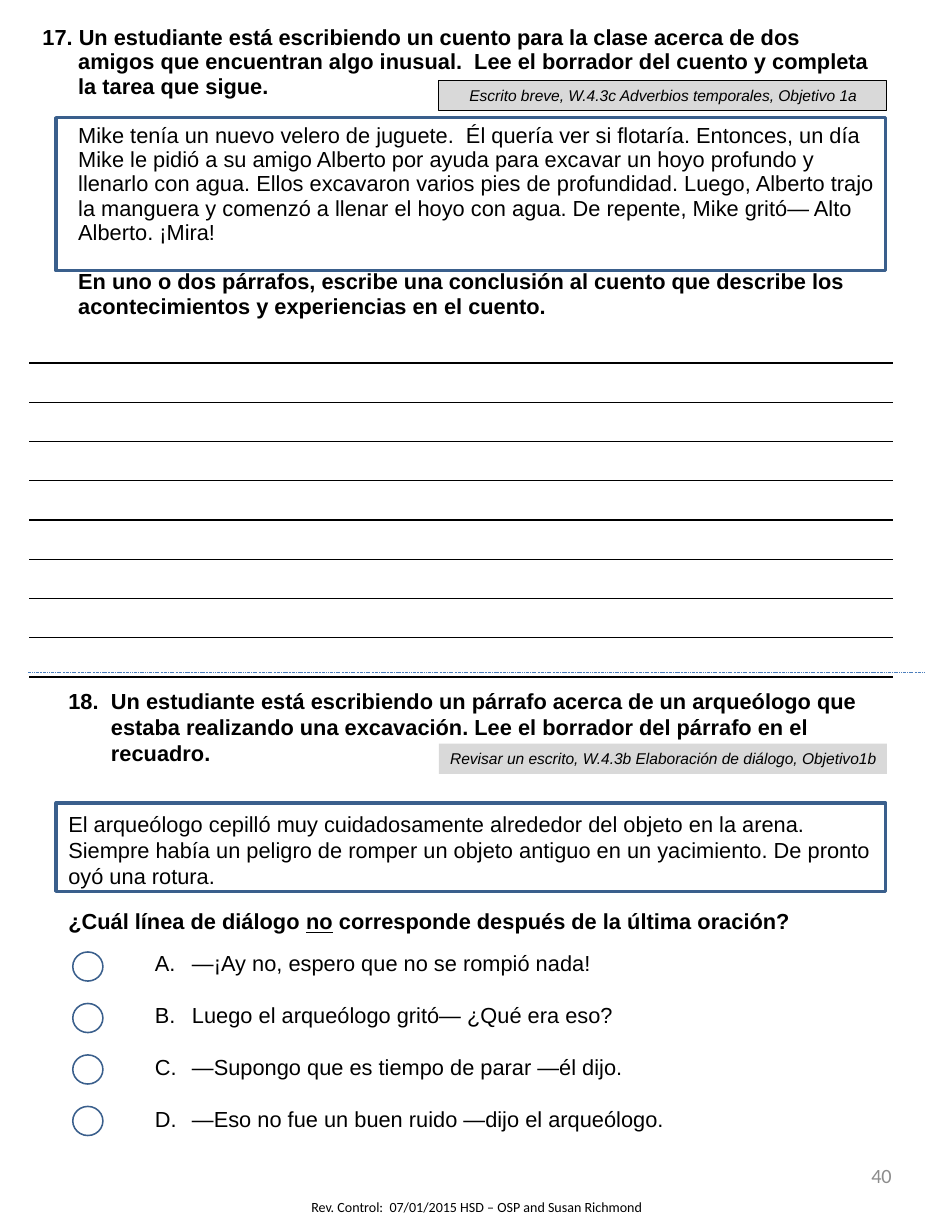
import pptx
import pptx.util
import pptx.dml.color
import pptx.enum.dml
import pptx.enum.shapes
import pptx.enum.text
import pptx.oxml
import pptx.oxml.ns

Pt = pptx.util.Pt
ALIGN = pptx.enum.text.PP_ALIGN
ANCHOR = pptx.enum.text.MSO_ANCHOR
SHAPE = pptx.enum.shapes.MSO_SHAPE

COLORS = {
    "ink": "000000",
    "frame": "3A5F8C",
    "divider": "4B7EBC",
    "tag": "D9D9D9",
    "number": "8C8C8C",
    "white": "FFFFFF",
}


def rgb(name):
    return pptx.dml.color.RGBColor.from_string(COLORS[name])


def style(p, size=14, color="ink", font="Arial", bold=False, italic=False):
    for r in p.runs:
        r.font.size = Pt(size)
        r.font.name = font
        r.font.bold = bold
        r.font.italic = italic
        r.font.color.rgb = rgb(color)


def write(p, text, pitch, after=0, left=0, hang=0, bold=False):
    p.text = text
    p.line_spacing = Pt(pitch)
    p.space_after = Pt(after)
    pPr = p._p.get_or_add_pPr()
    pPr.set("marL", str(Pt(left)))
    pPr.set("indent", str(Pt(-hang)))
    style(p, bold=bold)
    return p


def add_text(s, box, text, size, color, align=ALIGN.LEFT, anchor=ANCHOR.TOP):
    tf = s.shapes.add_textbox(*map(Pt, box)).text_frame
    tf.word_wrap = True
    tf.vertical_anchor = anchor
    tf.margin_left = tf.margin_right = Pt(7.9)
    tf.text = text
    tf.paragraphs[0].alignment = align
    style(tf.paragraphs[0], size, color, "Calibri")


def add_shape(s, kind, box, fill=None, line=None, width=1):
    sp = s.shapes.add_shape(kind, *map(Pt, box))
    sp.shadow.inherit = False
    if fill:
        sp.fill.solid()
        sp.fill.fore_color.rgb = rgb(fill)
    else:
        sp.fill.background()
    if line:
        sp.line.color.rgb = rgb(line)
        sp.line.width = Pt(width)
    else:
        sp.line.fill.background()
    return sp


def add_tag(s, box, text, align, line=None):
    sp = add_shape(s, SHAPE.RECTANGLE, box, "tag", line, 0.75)
    tf = sp.text_frame
    tf.word_wrap = True
    tf.text = text
    tf.paragraphs[0].alignment = align
    style(tf.paragraphs[0], 10, italic=True)


def add_rule(cell, side):
    ln = pptx.oxml.parse_xml(
        f'<a:{side} {pptx.oxml.ns.nsdecls("a")} w="{Pt(1)}"><a:solidFill>'
        f'<a:srgbClr val="{COLORS["ink"]}"/></a:solidFill></a:{side}>')
    cell._tc.get_or_add_tcPr().append(ln)


def add_writing_table(s, box, first_height, lines):
    x, y, w, h = box
    table = s.shapes.add_table(lines + 1, 1, *map(Pt, box)).table
    table.first_row = table.horz_banding = False
    for i, row in enumerate(table.rows):
        row.height = Pt((h - first_height) / lines if i else first_height)
        cell = row.cells[0]
        cell.margin_top = cell.margin_bottom = Pt(0 if i else 4.3)
        cell.margin_left = cell.margin_right = Pt(7.9)
        if i:
            add_rule(cell, "lnT")
        add_rule(cell, "lnB")
        cell.fill.background()

    tf = table.cell(0, 0).text_frame
    pitch = 15.7
    write(tf.paragraphs[0],
          "17. Un estudiante está escribiendo un cuento para la clase acerca de dos "
          "amigos que encuentran algo inusual.  Lee el borrador del cuento y completa "
          "la tarea que sigue.", pitch, pitch, 23, 23, True)
    write(tf.add_paragraph(),
          "Mike tenía un nuevo velero de juguete.  Él quería ver si flotaría. Entonces, "
          "un día Mike le pidió a su amigo Alberto por ayuda para excavar un hoyo "
          "profundo y llenarlo con agua. Ellos excavaron varios pies de profundidad. "
          "Luego, Alberto trajo la manguera y comenzó a llenar el hoyo con agua. De "
          "repente, Mike gritó— Alto Alberto. ¡Mira!", pitch, pitch, 23)
    write(tf.add_paragraph(),
          "En uno o dos párrafos, escribe una conclusión al cuento que describe los "
          "acontecimientos y experiencias en el cuento.", pitch, 0, 23, 0, True)


def add_choice_question(s, box):
    tf = s.shapes.add_textbox(*map(Pt, box)).text_frame
    tf.word_wrap = True
    tf.margin_left = tf.margin_right = Pt(7.9)
    tf.margin_top = tf.margin_bottom = Pt(4.3)
    pitch = 16.7
    write(tf.paragraphs[0],
          "18.\tUn estudiante está escribiendo un párrafo acerca de un arqueólogo que "
          "estaba realizando una excavación. Lee el borrador del párrafo en el recuadro.",
          pitch, 29, 27.4, 27.4, True)
    write(tf.add_paragraph(),
          "El arqueólogo cepilló muy cuidadosamente alrededor del objeto en la arena. "
          "Siempre había un peligro de romper un objeto antiguo en un yacimiento. De "
          "pronto oyó una rotura.", pitch, 12.5)
    p = write(tf.add_paragraph(), "¿Cuál línea de diálogo ", pitch, 10)
    for text in ("no", " corresponde después de la última oración?"):
        p.add_run().text = text
    style(p, bold=True)
    p.runs[1].font.underline = True

    for answer in ("—¡Ay no, espero que no se rompió nada!",
                   "Luego el arqueólogo gritó— ¿Qué era eso?",
                   "—Supongo que es tiempo de parar —él dijo.",
                   "—Eso no fue un buen ruido —dijo el arqueólogo."):
        p = write(tf.add_paragraph(), answer, pitch, pitch, 79.5, 23.8)
        p._p.get_or_add_pPr().append(pptx.oxml.parse_xml(
            f'<a:buAutoNum {pptx.oxml.ns.nsdecls("a")} type="alphaUcPeriod"/>'))


def add_answer_circles(s, box, count, step):
    x, y, w, h = box
    for i in range(count):
        add_shape(s, SHAPE.OVAL, (x, y + i * step, w, h), "white", "frame")


def add_divider(s, x, y, w):
    line = s.shapes.add_connector(
        pptx.enum.shapes.MSO_CONNECTOR.STRAIGHT, Pt(x), Pt(y), Pt(x + w), Pt(y))
    line.line.color.rgb = rgb("divider")
    line.line.width = Pt(0.25)
    line.line.dash_style = pptx.enum.dml.MSO_LINE.DASH_DOT_DOT
    line._element.spPr.append(pptx.oxml.parse_xml(
        f'<a:effectLst {pptx.oxml.ns.nsdecls("a")}/>'))


def main():
    prs = pptx.Presentation()
    prs.slide_width, prs.slide_height = Pt(612), Pt(792)
    s = prs.slides.add_slide(prs.slide_layouts[6])
    add_text(s, (192.2, 766.8, 306, 18.7),
             "Rev. Control:  07/01/2015 HSD – OSP and Susan Richmond", 9, "ink")
    add_text(s, (438.5, 734.4, 142.6, 42.5), "40", 13, "number",
             ALIGN.RIGHT, ANCHOR.MIDDLE)
    add_writing_table(s, (19.4, 12.2, 554.4, 423.2), 221.2, 8)
    add_shape(s, SHAPE.RECTANGLE, (36, 75.6, 533.5, 98.6), None, "frame", 2)
    add_choice_question(s, (36, 437.8, 533.5, 297.4))
    add_shape(s, SHAPE.RECTANGLE, (36, 516.2, 533.5, 56.9), None, "frame", 2)
    add_divider(s, 18, 432, 576)
    add_tag(s, (282.2, 51.8, 288, 19.4),
            "Escrito breve, W.4.3c Adverbios temporales, Objetivo 1a",
            ALIGN.CENTER, "ink")
    add_tag(s, (282.2, 478.1, 288, 19.4),
            "Revisar un escrito, W.4.3b Elaboración de diálogo, Objetivo1b",
            ALIGN.RIGHT)
    add_answer_circles(s, (46.8, 612, 19.4, 18.7), 4, 33.1)
    prs.save("out.pptx")


if __name__ == "__main__":
    main()
